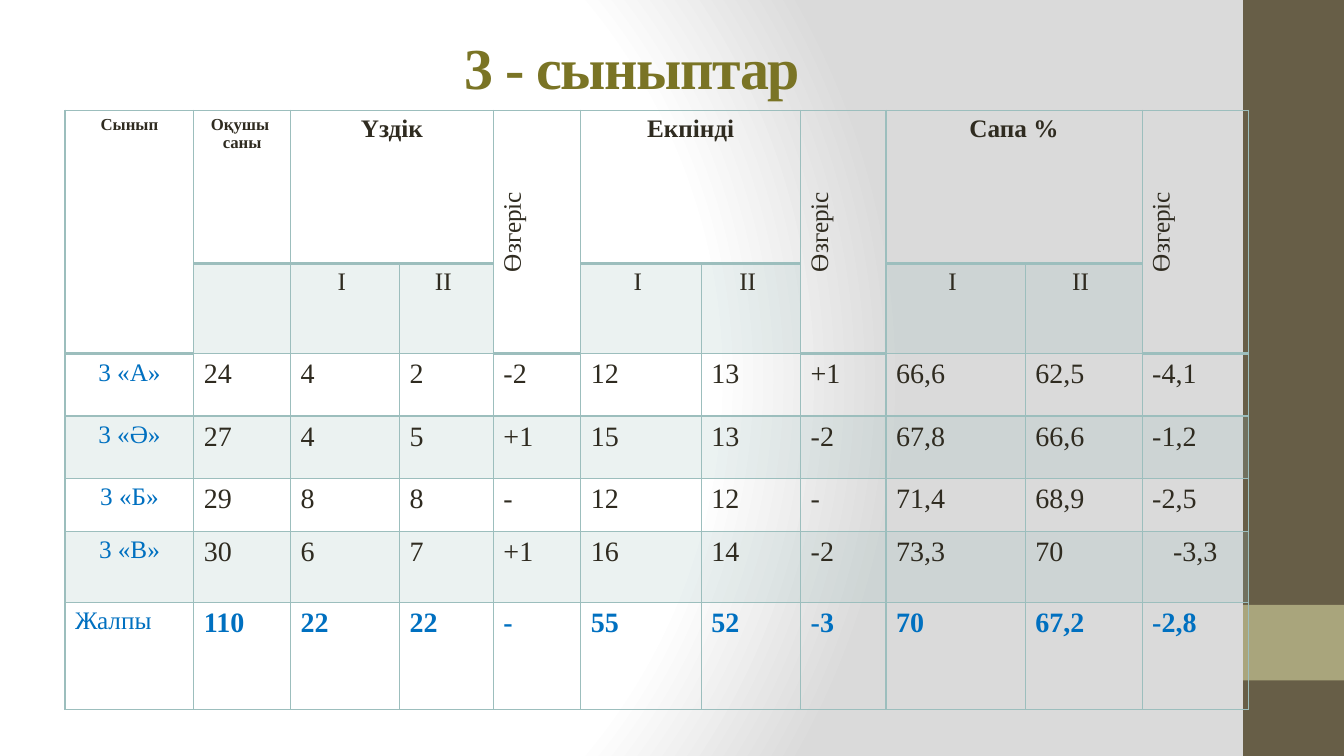
from lxml import etree
from pptx import Presentation
from pptx.dml.color import RGBColor
from pptx.enum.shapes import MSO_SHAPE
from pptx.enum.text import MSO_ANCHOR, PP_ALIGN
from pptx.oxml import parse_xml
from pptx.oxml.ns import qn
from pptx.util import Pt

RECTANGLE = MSO_SHAPE.RECTANGLE
MIDDLE = MSO_ANCHOR.MIDDLE
LEFT, CENTER = PP_ALIGN.LEFT, PP_ALIGN.CENTER

OLIVE = RGBColor(0x7A, 0x74, 0x25)
BROWN = RGBColor(0x67, 0x5E, 0x47)
KHAKI = RGBColor(0xA9, 0xA5, 0x7C)
INK = RGBColor(0x2F, 0x2B, 0x20)
BLUE = RGBColor(0x00, 0x70, 0xC0)
TEAL = RGBColor(0x9C, 0xBE, 0xBD)

PLAIN_TABLE_STYLE = "{2D5ABB26-0587-4C30-8999-92F81FD0307C}"
BACKGROUND = """
<p:bg xmlns:p="http://schemas.openxmlformats.org/presentationml/2006/main"
      xmlns:a="http://schemas.openxmlformats.org/drawingml/2006/main">
  <p:bgPr>
    <a:gradFill rotWithShape="1">
      <a:gsLst>
        <a:gs pos="0"><a:srgbClr val="FFFFFF"/></a:gs>
        <a:gs pos="75000"><a:srgbClr val="FFFFFF"/></a:gs>
        <a:gs pos="100000"><a:srgbClr val="DADADA"/></a:gs>
      </a:gsLst>
      <a:path path="circle">
        <a:fillToRect l="20000" t="50000" r="100000" b="50000"/>
      </a:path>
    </a:gradFill>
    <a:effectLst/>
  </p:bgPr>
</p:bg>"""

COLUMN_WIDTHS = [92, 69, 78, 67, 62.5, 86, 71, 61, 99.5, 83.5, 76]
ROW_HEIGHTS = [109.5, 64, 44.5, 44.5, 38, 50.5, 76.5]
GROUPS = {2: "Үздік", 5: "Екпінді", 8: "Сапа %"}
RESULTS = [
    ["3 «А»", "24", "4", "2", "-2", "12", "13", "+1", "66,6", "62,5", "-4,1"],
    ["3 «Ә»", "27", "4", "5", "+1", "15", "13", "-2", "67,8", "66,6", "-1,2"],
    ["3 «Б»", "29", "8", "8", "-", "12", "12", "-", "71,4", "68,9", "-2,5"],
    ["3 «В»", "30", "6", "7", "+1", "16", "14", "-2", "73,3", "70", "-3,3"],
    ["Жалпы", "110", "22", "22", "-", "55", "52", "-3", "70", "67,2", "-2,8"],
]
BANDED_ROWS = (1, 3, 5)


class SlideBuilder:
    font_name = "Times New Roman"

    def __init__(self, slide):
        self.slide = slide

    def background(self):
        self.slide.element.cSld.insert(0, parse_xml(BACKGROUND))

    def bar(self, left, top, width, height, color):
        shape = self.slide.shapes.add_shape(
            RECTANGLE, Pt(left), Pt(top), Pt(width), Pt(height))
        shape.shadow.inherit = False
        shape.fill.solid()
        shape.fill.fore_color.rgb = color
        shape.line.fill.background()

    def text(self, frame, words, size, color=INK, bold=False, align=LEFT):
        paragraph = frame.paragraphs[0]
        paragraph.alignment = align
        run = paragraph.add_run()
        run.text = words
        run.font.name = self.font_name
        run.font.size = Pt(size)
        run.font.bold = bold
        run.font.color.rgb = color
        return run

    def title(self, words, left, top, width, height):
        shape = self.slide.shapes.title
        shape.left, shape.top = Pt(left), Pt(top)
        shape.width, shape.height = Pt(width), Pt(height)
        shape.text_frame.vertical_anchor = MIDDLE
        run = self.text(shape.text_frame, words, 41.4, OLIVE, True, CENTER)
        run.font._element.set("spc", "-100")

    def table(self, left, top, widths, heights):
        frame = self.slide.shapes.add_table(
            len(heights), len(widths), Pt(left), Pt(top),
            Pt(sum(widths)), Pt(sum(heights)))
        table = frame.table
        table.first_row = table.horz_banding = False
        table._tbl.tblPr.find(qn("a:tableStyleId")).text = PLAIN_TABLE_STYLE
        for column, width in zip(table.columns, widths):
            column.width = Pt(width)
        for row, height in zip(table.rows, heights):
            row.height = Pt(height)
        return table

    def borders(self, cell, top=1, bottom=1):
        properties = cell._tc.get_or_add_tcPr()
        for side, width in (("L", 1), ("R", 1), ("T", top), ("B", bottom)):
            line = etree.SubElement(properties, qn(f"a:ln{side}"), w=str(Pt(width)))
            fill = etree.SubElement(line, qn("a:solidFill"))
            etree.SubElement(fill, qn("a:srgbClr"), val=str(TEAL))

    def cell_fill(self, cell, banded):
        if not banded:
            cell.fill.background()
            return
        cell.fill.solid()
        cell.fill.fore_color.rgb = TEAL
        for color in cell._tc.tcPr.findall(f"{qn('a:solidFill')}/{qn('a:srgbClr')}"):
            etree.SubElement(color, qn("a:alpha"), val="20000")

    def header(self, table):
        for column in (0, 4, 7, 10):
            table.cell(0, column).merge(table.cell(1, column))
        for column, words in ((0, "Сынып"), (1, "Оқушы  саны")):
            self.text(table.cell(0, column).text_frame, words, 12, INK, True, CENTER)
        for column, words in GROUPS.items():
            table.cell(0, column).merge(table.cell(0, column + 1))
            self.text(table.cell(0, column).text_frame, words, 18, INK, True, CENTER)
            for offset, term in enumerate(("I ", "II ")):
                cell = table.cell(1, column + offset)
                self.text(cell.text_frame, term, 18, align=CENTER)
            change = table.cell(0, column + 2)
            change._tc.get_or_add_tcPr().set("vert", "vert270")
            self.text(change.text_frame, "Өзгеріс", 18, align=CENTER)

    def results(self, table):
        for row, values in enumerate(RESULTS, start=2):
            total = values is RESULTS[-1]
            for column, value in enumerate(values):
                frame = table.cell(row, column).text_frame
                if column == 0:
                    self.text(frame, value, 18, BLUE, align=LEFT if total else CENTER)
                else:
                    align = CENTER if value == "-3,3" else LEFT
                    self.text(frame, value, 20, BLUE if total else INK, total, align)

    def results_table(self, left, top):
        table = self.table(left, top, COLUMN_WIDTHS, ROW_HEIGHTS)
        for row in range(len(ROW_HEIGHTS)):
            for column in range(len(COLUMN_WIDTHS)):
                cell = table.cell(row, column)
                self.borders(cell, 2 if row == 1 else 1, 2 if row == 0 else 1)
                self.cell_fill(cell, row in BANDED_ROWS)
        self.header(table)
        self.results(table)


def main():
    presentation = Presentation()
    presentation.slide_width, presentation.slide_height = Pt(960), Pt(540)
    slide = presentation.slides.add_slide(presentation.slide_layouts[5])
    builder = SlideBuilder(slide)
    builder.background()
    builder.bar(888, 0, 72, 540, BROWN)
    builder.bar(888, 432, 72, 54, KHAKI)
    builder.title("3 - сыныптар", 127.5, 18.7, 648, 57)
    builder.results_table(46.5, 78.7)
    presentation.save("out.pptx")


if __name__ == "__main__":
    main()
